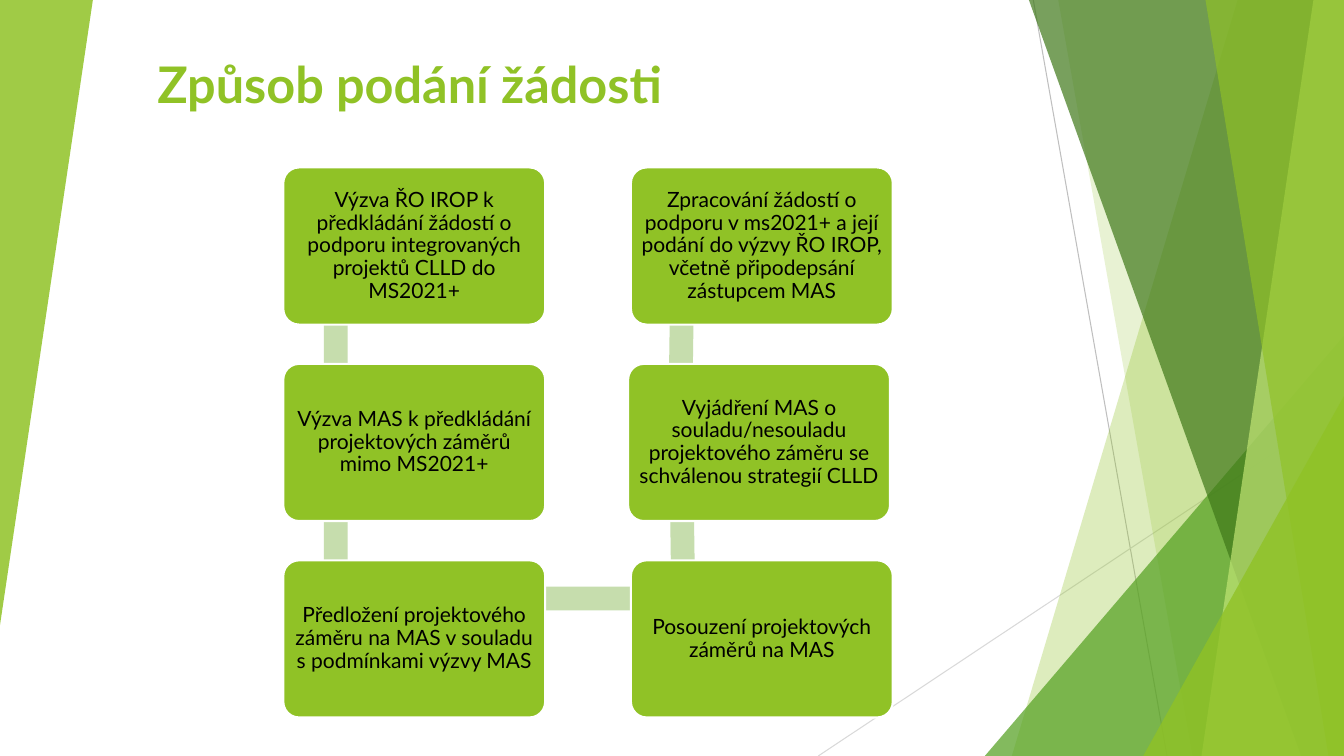
import math

from lxml import etree
from pptx import Presentation
from pptx.dml.color import RGBColor
from pptx.enum import shapes, text
from pptx.oxml.ns import qn
from pptx.util import Cm, Pt

W, H = 33.87, 19.05
GREEN = "90C226"
SHAPE = shapes.MSO_SHAPE

# Process steps, left column downwards, then right column upwards
STEPS = [
    (0, 0, "Výzva ŘO IROP k předkládání žádostí o podporu integrovaných projektů CLLD do MS2021+"),
    (0, 1, "Výzva MAS k předkládání projektových záměrů mimo MS2021+"),
    (0, 2, "Předložení projektového záměru na MAS v souladu s podmínkami výzvy MAS"),
    (1, 2, "Posouzení projektových záměrů na MAS"),
    (1, 1, "Vyjádření MAS o souladu/nesouladu projektového záměru se schválenou strategií CLLD"),
    (1, 0, "Zpracování žádostí o podporu v ms2021+ a její podání do výzvy ŘO IROP, "
           "včetně připodepsání zástupcem MAS"),
]


def rgb(color):
    return RGBColor.from_string(color)


def paint(sp, color, alpha=100):
    sp.shadow.inherit = False
    sp.fill.solid()
    sp.fill.fore_color.rgb = rgb(color)
    sp.line.fill.background()
    if alpha < 100:
        clr = sp.fill._xPr.find(qn("a:solidFill"))[0]
        etree.SubElement(clr, qn("a:alpha")).set("val", str(alpha * 1000))


def add_shape(slide, kind, x, y, w, h, color, alpha=100):
    sp = slide.shapes.add_shape(kind, Cm(x), Cm(y), Cm(w), Cm(h))
    paint(sp, color, alpha)
    return sp


def write(sp, words, size, color, align, anchor, bold=False):
    tf = sp.text_frame
    tf.word_wrap = True
    tf.vertical_anchor = anchor
    tf.text = words
    p = tf.paragraphs[0]
    p.alignment = align
    font = p.runs[0].font
    font.name, font.size, font.bold = "Lato", Pt(size), bold
    font.color.rgb = rgb(color)
    return tf


def add_line(slide, x1, y1, x2, y2, color):
    line = slide.shapes.add_connector(
        shapes.MSO_CONNECTOR.STRAIGHT, Cm(x1), Cm(y1), Cm(x2), Cm(y2))
    line.line.color.rgb = rgb(color)
    line.line.width = Pt(0.75)
    etree.SubElement(line._element.spPr, qn("a:effectLst"))


def add_band(slide, top_x, bottom_x, color, alpha):
    """Full-height facet between a slanted edge and the right side."""
    fb = slide.shapes.build_freeform(Cm(top_x), 0)
    fb.add_line_segments(
        [(Cm(W), 0), (Cm(W), Cm(H)), (Cm(bottom_x), Cm(H))], close=True)
    paint(fb.convert_to_shape(), color, alpha)


def add_corner(slide, x, y, w, h, color, alpha):
    sp = add_shape(slide, SHAPE.ISOSCELES_TRIANGLE, x, y, w, h, color, alpha)
    sp.adjustments[0] = 1
    return sp


def add_backdrop(slide):
    # Thin lines
    add_line(slide, 26.04, 0, 29.41, H, "BFBFBF")
    add_line(slide, W, 10.24, 20.62, H, "D9D9D9")
    # Facets on the right
    add_band(slide, 31.19, 25.5, GREEN, 30)
    add_band(slide, 26.67, 30.05, GREEN, 20)
    add_corner(slide, W - 9.05, H - 10.59, 9.05, 10.59, "54A021", 72)
    add_band(slide, 25.93, 32.79, "3F7819", 70)
    add_band(slide, 33.1, 30.28, "C0E474", 70)
    add_band(slide, 30.38, 33.48, GREEN, 65)
    add_corner(slide, W - 5.06, H - 9.07, 5.06, 9.07, GREEN, 80)
    # Wedge on the left
    add_corner(slide, 0, 0, 2.34, 15.75, GREEN, 85).rotation = 180


def add_title(slide, x, y, w, h):
    sp = slide.shapes.add_textbox(Cm(x), Cm(y), Cm(w), Cm(h))
    write(sp, "Způsob podání žádosti", 36, GREEN,
          text.PP_ALIGN.RIGHT, text.MSO_ANCHOR.BOTTOM, bold=True)


def add_bar(slide, start, end, thick=0.6):
    """Bar between two points, turned to their direction."""
    (x1, y1), (x2, y2) = start, end
    length = math.dist(start, end)
    sp = add_shape(slide, SHAPE.RECTANGLE, (x1 + x2 - length) / 2,
                   (y1 + y2 - thick) / 2, length, thick, "C6DDAD")
    sp.rotation = math.degrees(math.atan2(y2 - y1, x2 - x1)) % 360


def add_card(slide, x, y, w, h, words):
    sp = add_shape(slide, SHAPE.ROUNDED_RECTANGLE, x, y, w, h, GREEN)
    sp.adjustments[0] = 0.1
    sp.line.color.rgb = rgb("FFFFFF")
    sp.line.width = Pt(1.5)
    tf = write(sp, words, 15, "000000", text.PP_ALIGN.CENTER, text.MSO_ANCHOR.MIDDLE)
    tf.paragraphs[0].line_spacing = 0.9
    # The rounded corners already inset the text a little
    tf.margin_left = tf.margin_right = Cm(0.15)
    tf.margin_top = tf.margin_bottom = Cm(0.15)


def add_process(slide, x, y, w, h):
    card_w, card_h = 6.6, 3.96
    step_x, step_y = w - card_w, (h - card_h) / 2
    corners = [(x + col * step_x, y + row * step_y) for col, row, _ in STEPS]
    # The middle card on the right sits slightly further left
    corners[4] = (corners[4][0] - 0.07, corners[4][1])
    # Linking bars lie behind the cards
    nodes = [(cx + 1.32, cy + 0.96) for cx, cy in corners]
    for start, end in zip(nodes, nodes[1:]):
        add_bar(slide, start, end)
    for (cx, cy), (_, _, words) in zip(corners, STEPS):
        add_card(slide, cx, cy, card_w, card_h, words)


def main():
    prs = Presentation()
    prs.slide_width, prs.slide_height = Cm(W), Cm(H)
    slide = prs.slides.add_slide(prs.slide_layouts[6])
    add_backdrop(slide)
    add_title(slide, 2.46, 0.36, 14.48, 2.64)
    add_process(slide, 7.14, 4.22, 15.36, 13.86)
    prs.save("out.pptx")


if __name__ == "__main__":
    main()
